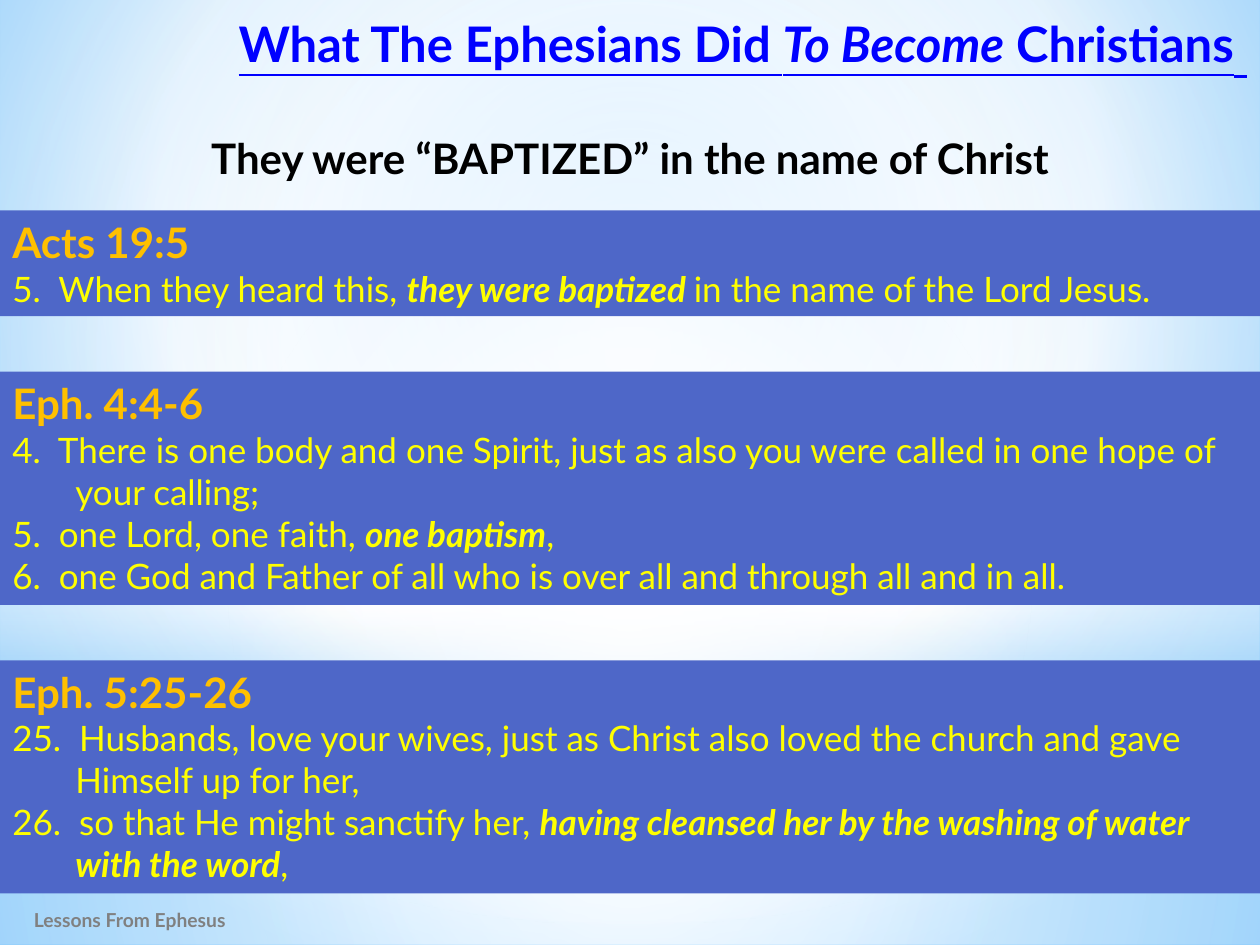
from pptx import Presentation
from pptx.dml.color import RGBColor
from pptx.enum.shapes import MSO_SHAPE as Shape
from pptx.enum.text import MSO_ANCHOR as Anchor, MSO_AUTO_SIZE as Fit, PP_ALIGN as Align
from pptx.oxml import parse_xml
from pptx.oxml.ns import nsdecls
from pptx.util import Inches, Pt

# Words between asterisks are bold italic in verses, italic in the title.
TITLE = "What The Ephesians Did *To Become* Christians"
POINT = "They were “BAPTIZED” in the name of Christ"
FOOTER = "Lessons From Ephesus"
VERSES = [  # top, height, reference, lines
    (1.67, 0.84, "Acts 19:5", [
        "5.  When they heard this, *they were baptized *in the name of the Lord Jesus."]),
    (2.95, 1.85, "Eph. 4:4-6", [
        "4.  There is one body and one Spirit, just as also you were called "
        "in one hope of your calling;",
        "5.  one Lord, one faith, *one baptism*,",
        "6.  one God and Father of all who is over all and through all and in all."]),
    (5.24, 1.85, "Eph. 5:25-26", [
        "25.  Husbands, love your wives, just as Christ also loved the church "
        "and gave Himself up for her,",
        "26.  so that He might sanctify her, *having cleansed her by the washing "
        "of water with the word*,"]),
]

WHITE, SKY = "FFFFFF", "B4DCFA"
MID = (50, 50, 50, 50)
BACK = [(0, "9ED5FF", 100), (60, WHITE, 100), (100, "5BB9FF", 100)]
GLOWS = [  # shape, top, height, stops (position, colour, opacity), centre
    (Shape.RECTANGLE, 5.58, 1.92, [(0, WHITE, 91), (37, WHITE, 76), (100, SKY, 79)], MID),
    (Shape.RECTANGLE, 0, 5.58, [(0, WHITE, 89), (48, WHITE, 62), (100, SKY, 79)], MID),
    (Shape.RECTANGLE, 4.12, 2.5, [(0, WHITE, 0), (29, WHITE, 30), (45, SKY, 40),
                                  (55, WHITE, 26), (65, SKY, 60), (100, WHITE, 0)], None),
    (Shape.OVAL, 1.75, 5.58, [(0, WHITE, 100), (56, WHITE, 0)], MID),
]
HEAD = dict(size=Pt(24), bold=True)
VERSE = dict(size=Pt(20), bold=False)


def rgb(code):
    return RGBColor.from_string(code)


def grad(stops, centre):
    """Gradient XML: circular around centre, or top to bottom without one."""
    marks = "".join(
        f'<a:gs pos="{pos * 1000}"><a:srgbClr val="{code}">'
        f'<a:alpha val="{alpha * 1000}"/></a:srgbClr></a:gs>'
        for pos, code, alpha in stops)
    way = '<a:lin ang="5400000" scaled="0"/>'
    if centre:
        sides = " ".join(f'{k}="{v * 1000}"' for k, v in zip("ltrb", centre))
        way = f'<a:path path="circle"><a:fillToRect {sides}/></a:path>'
    return f'<a:gradFill {nsdecls("a")} rotWithShape="1"><a:gsLst>{marks}</a:gsLst>{way}</a:gradFill>'


def place(shape, *box):
    for name, val in zip(("left", "top", "width", "height"), box):
        setattr(shape, name, Inches(val))


def add_shape(kind, top, high):
    shape = slide.shapes.add_shape(kind, 0, Inches(top), Inches(10), Inches(high))
    shape.shadow.inherit = False
    shape.line.fill.background()
    return shape


def add_run(para, text, code, **form):
    run = para.add_run()
    run.text = text
    run.font.name = "Lato"
    run.font.color.rgb = rgb(code)
    for name, val in form.items():
        setattr(run.font, name, val)


def write(para, text, code, form, accent=None, align=Align.LEFT, hang=True):
    """Fill a paragraph, giving the accent format to text between asterisks."""
    para.alignment = align
    if hang:
        props = para._p.get_or_add_pPr()
        props.set("marL", str(Inches(0.5)))
        props.set("indent", str(-Inches(0.5)))
    for i, part in enumerate(text.split("*")):
        add_run(para, part, code, **{**form, **(accent if i % 2 else {})})


def set_frame(shape, anchor=Anchor.TOP, fit=Fit.NONE):
    frame = shape.text_frame
    frame.word_wrap = True
    frame.auto_size = fit
    frame.vertical_anchor = anchor
    return frame


def add_text(box, *args, anchor=Anchor.TOP, **form):
    shape = slide.shapes.add_textbox(*map(Inches, box))
    write(set_frame(shape, anchor).paragraphs[0], *args, **form)


deck = Presentation()
deck.slide_width, deck.slide_height = Inches(10), Inches(7.5)
slide = deck.slides.add_slide(deck.slide_layouts[5])
slide._element.cSld.insert(0, parse_xml(
    f'<p:bg {nsdecls("p", "a")}><p:bgPr>{grad(BACK, (20, 10, 20, 60))}'
    '<a:effectLst/></p:bgPr></p:bg>'))

for kind, top, high, stops, centre in GLOWS:
    glow = add_shape(kind, top, high)
    glow.fill.background()
    props = glow._element.spPr
    props.replace(props.find("{*}noFill"), parse_xml(grad(stops, centre)))

add_text((0.17, 7.1, 3.67, 0.4), FOOTER, "808080", dict(size=Pt(11), bold=True),
         anchor=Anchor.MIDDLE, hang=False)

title = slide.shapes.title
slide.shapes._spTree.append(title._element)  # in front of the glows
place(title, 0, 0, 10, 0.67)
para = set_frame(title).paragraphs[0]
look = dict(size=Pt(28), bold=True, underline=True)
write(para, TITLE, "0000FF", look, dict(italic=True), Align.RIGHT, hang=False)
add_run(para, " ", "0000FF", **{**look, "size": Pt(32)})

add_text((0, 1, 10, 0.5), POINT, "000000", HEAD, align=Align.CENTER)

for top, high, ref, lines in VERSES:
    band = add_shape(Shape.RECTANGLE, top, high)
    band.fill.solid()
    band.fill.fore_color.rgb = rgb("4E67C8")
    frame = set_frame(band, fit=Fit.SHAPE_TO_FIT_TEXT)
    write(frame.paragraphs[0], ref, "FFC000", HEAD)
    for line in lines:
        write(frame.add_paragraph(), line, "FFFF00", VERSE, dict(bold=True, italic=True))

deck.save("out.pptx")
